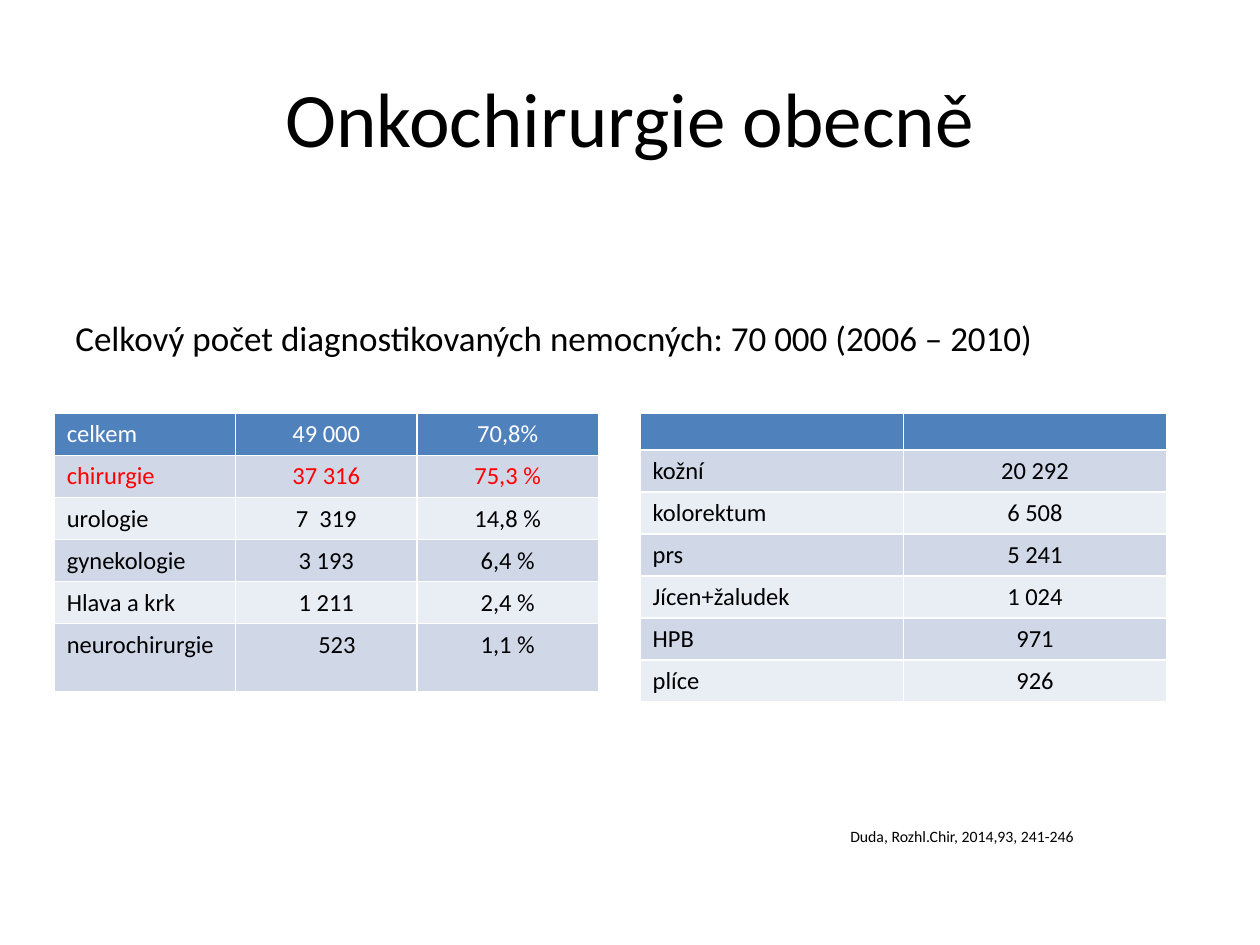
from dataclasses import dataclass

from lxml import etree
from pptx import Presentation
from pptx.dml.color import RGBColor
from pptx.enum.text import MSO_ANCHOR, PP_ALIGN
from pptx.util import Inches, Pt

LEFT, CENTER = PP_ALIGN.LEFT, PP_ALIGN.CENTER
MIDDLE = MSO_ANCHOR.MIDDLE


@dataclass(frozen=True)
class Theme:
    font: str = "Calibri"
    text: str = "000000"
    header_text: str = "FFFFFF"
    highlight: str = "FF0000"
    header: str = "4F81BD"
    bands: tuple = ("D0D8E8", "E9EDF4")
    title_size: int = 44
    body_size: int = 20
    table_size: int = 14
    source_size: int = 9
    empty_size: int = 10


THEME = Theme()


def write(tf, text, size, color=THEME.text, align=LEFT):
    tf.text = text
    p = tf.paragraphs[0]
    p.alignment = align
    for r in p.runs:
        r.font.name = THEME.font
        r.font.size = Pt(size)
        r.font.bold = False
        r.font.color.rgb = RGBColor.from_string(color)
    return p


def add_grid(s, rows, left, top, col_width, heights):
    cols = len(rows[0])
    frame = s.shapes.add_table(len(rows), cols, Inches(left), Inches(top),
                               Inches(col_width * cols), Inches(sum(heights)))
    table = frame.table
    for column in table.columns:
        column.width = Inches(col_width)
    for i, values in enumerate(rows):
        table.rows[i].height = Inches(heights[i])
        fill = THEME.bands[(i - 1) % 2] if i else THEME.header
        color = THEME.text if i else THEME.header_text
        if values[0] == "chirurgie":
            color = THEME.highlight
        for j, value in enumerate(values):
            cell = table.cell(i, j)
            cell.fill.solid()
            cell.fill.fore_color.rgb = RGBColor.from_string(fill)
            p = write(cell.text_frame, value, THEME.table_size, color,
                      CENTER if j else LEFT)
            if not value:
                # Small type keeps the empty header row low
                end = etree.SubElement(p._p, p._p.tag[:-1] + "endParaRPr")
                end.set("sz", str(THEME.empty_size * 100))
    return table


prs = Presentation()
prs.slide_width, prs.slide_height = Inches(10), Inches(7.5)
s = prs.slides.add_slide(prs.slide_layouts[5])

# Title
title = s.shapes.title
title.left, title.top = Inches(0.5), Inches(0.3)
title.width, title.height = Inches(9), Inches(1.25)
title.text_frame.vertical_anchor = MIDDLE
write(title.text_frame, "Onkochirurgie obecně", THEME.title_size, align=CENTER)

# Statement and source: text, size, left, top, width, height
notes = [
    ("Celkový počet diagnostikovaných nemocných: 70 000 (2006 – 2010)",
     THEME.body_size, 0.5, 2.46, 9, 1.13),
    ("Duda, Rozhl.Chir, 2014,93, 241-246",
     THEME.source_size, 6.65, 6.51, 2.2, 0.25),
]
for text, size, *box in notes:
    tf = s.shapes.add_textbox(*map(Inches, box)).text_frame
    tf.word_wrap = True
    write(tf, text, size)

# Operations by specialty
specialties = [
    ("celkem", "49 000", "70,8%"),
    ("chirurgie", "37 316", "75,3 %"),
    ("urologie", "7  319", "14,8 %"),
    ("gynekologie", "3 193", "6,4 %"),
    ("Hlava a krk", "1 211", "2,4 %"),
    ("neurochirurgie", "523", "1,1 %"),
]
table = add_grid(s, specialties, 0.43, 3.28, 1.44, [0.31] * 5 + [0.54])
table.cell(5, 1).margin_left = Inches(0.27)

# Operations by diagnosis
diagnoses = [
    ("", ""),
    ("kožní", "20 292"),
    ("kolorektum", "6 508"),
    ("prs", "5 241"),
    ("Jícen+žaludek", "1 024"),
    ("HPB", "971"),
    ("plíce", "926"),
]
add_grid(s, diagnoses, 5.08, 3.28, 2.09, [0.29] + [0.31] * 6)

prs.save("out.pptx")
